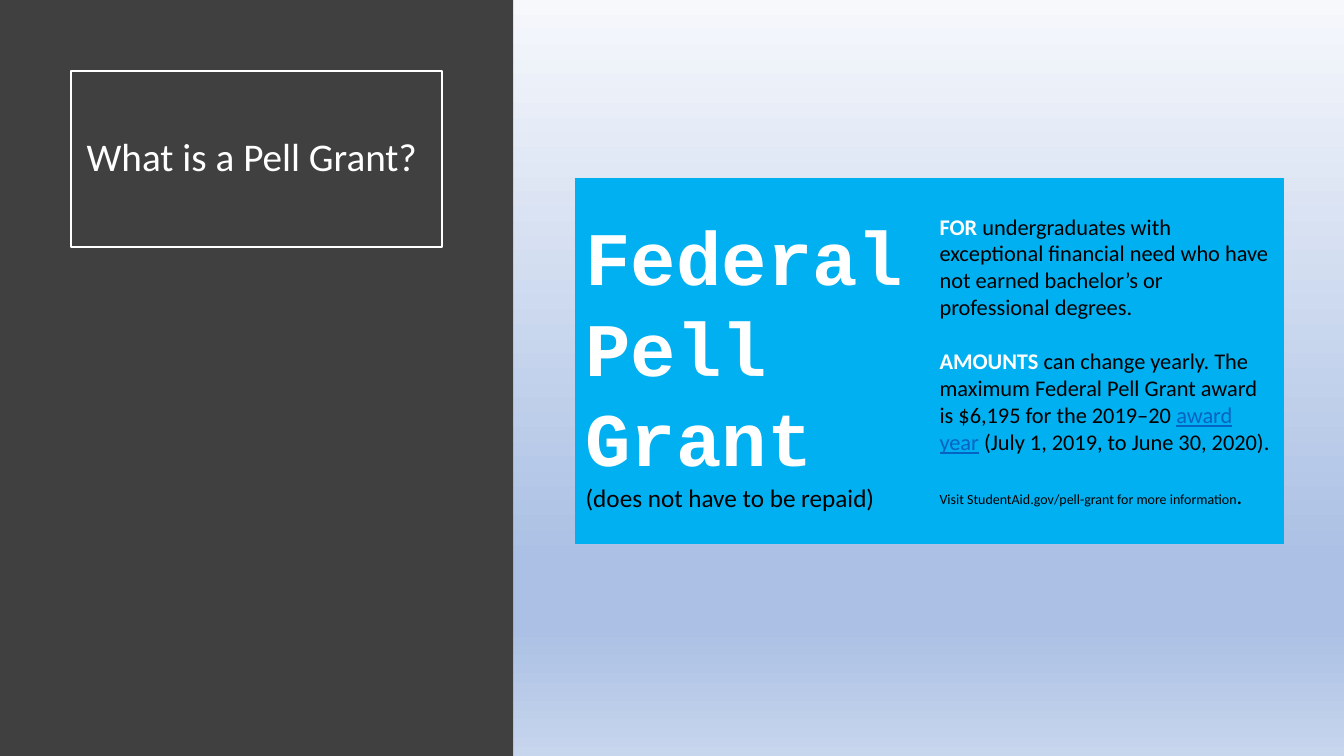
from lxml import etree
from pptx import Presentation
from pptx.dml.color import RGBColor
from pptx.enum.shapes import MSO_SHAPE
from pptx.enum.text import MSO_ANCHOR, PP_ALIGN
from pptx.oxml.ns import qn
from pptx.util import Inches, Pt

WHITE = RGBColor(0xFF, 0xFF, 0xFF)
BLACK = RGBColor(0, 0, 0)
CHARCOAL = RGBColor(0x40, 0x40, 0x40)
SKY = RGBColor(0x00, 0xB0, 0xF0)
LINK_BLUE = RGBColor(0x05, 0x63, 0xC1)
PALE = RGBColor(0xF6, 0xF8, 0xFC)
PERIWINKLE = RGBColor(0xAB, 0xC0, 0xE4)
MIST = RGBColor(0xC7, 0xD5, 0xED)


def add_box(s, left, top, width, height, fill=None, line=None, weight=1):
    sp = s.shapes.add_shape(MSO_SHAPE.RECTANGLE, Inches(left), Inches(top),
                            Inches(width), Inches(height))
    sp.shadow.inherit = False
    if fill is None:
        sp.fill.background()
    else:
        sp.fill.solid()
        sp.fill.fore_color.rgb = fill
    if line is None:
        sp.line.fill.background()
    else:
        sp.line.color.rgb = line
        sp.line.width = Pt(weight)
    return sp


def add_text(sp, paragraphs, align=PP_ALIGN.LEFT, gap=0, spacing=1.0):
    tf = sp.text_frame
    tf.word_wrap = True
    tf.vertical_anchor = MSO_ANCHOR.MIDDLE
    for i, runs in enumerate(paragraphs):
        p = tf.add_paragraph() if i else tf.paragraphs[0]
        p.alignment = align
        p.line_spacing = spacing
        p.space_before = Pt(gap if i else 0)
        for text, size, color, bold, font in runs:
            r = p.add_run()
            r.text = text
            r.font.size = Pt(size)
            r.font.color.rgb = color
            r.font.bold = bold
            r.font.name = font
            r.font.underline = color == LINK_BLUE


prs = Presentation()
prs.slide_width = Inches(13.33)
prs.slide_height = Inches(7.5)
s = prs.slides.add_slide(prs.slide_layouts[6])

bg = s.background.fill
bg.gradient()
bg.gradient_angle = 270
stops = next(s.element.iter(qn("a:gsLst")))
for stop in list(stops):
    stops.remove(stop)
for percent, color in [(0, PALE), (74, PERIWINKLE), (83, PERIWINKLE), (100, MIST)]:
    stop = etree.SubElement(stops, qn("a:gs"), pos=str(percent * 1000))
    etree.SubElement(stop, qn("a:srgbClr"), val=str(color))

add_box(s, 0, 0, 5.09, 7.5, fill=CHARCOAL)

title = add_box(s, 0.7, 0.7, 3.68, 1.75, line=WHITE, weight=1.5)
add_text(title, [[("What is a Pell Grant? ", 28, WHITE, False, "Calibri")]],
         align=PP_ALIGN.CENTER, spacing=0.9)

card_left, card_top, card_width, card_height = 5.71, 1.77, 3.51, 3.62

details = add_box(s, card_left + card_width, card_top, card_width, card_height, SKY, SKY)
add_text(details, [
    [("FOR ", 16, WHITE, True, "Calibri"),
     ("undergraduates with exceptional financial need who have not earned "
      "bachelor’s or professional degrees.", 16, BLACK, False, "Calibri")],
    [("AMOUNTS ", 16, WHITE, True, "Calibri"),
     ("can change yearly. The maximum Federal Pell Grant award is $6,195 "
      "for the 2019–20 ", 16, BLACK, False, "Calibri"),
     ("award year", 16, LINK_BLUE, False, "Calibri"),
     (" (July 1, 2019, to June 30, 2020).", 16, BLACK, False, "Calibri")],
    [("Visit StudentAid.gov/pell-grant for more information", 10, BLACK, False, "Calibri"),
     (".", 16, BLACK, False, "Calibri")],
], gap=19.5)

name = add_box(s, card_left, card_top, card_width, card_height, SKY, SKY)
add_text(name, [
    [("Federal Pell", 54, WHITE, True, "Courier New")],
    [("Grant", 54, WHITE, True, "Courier New")],
    [("(does not have to be repaid)", 18, BLACK, False, "Calibri")],
])

prs.save("out.pptx")
